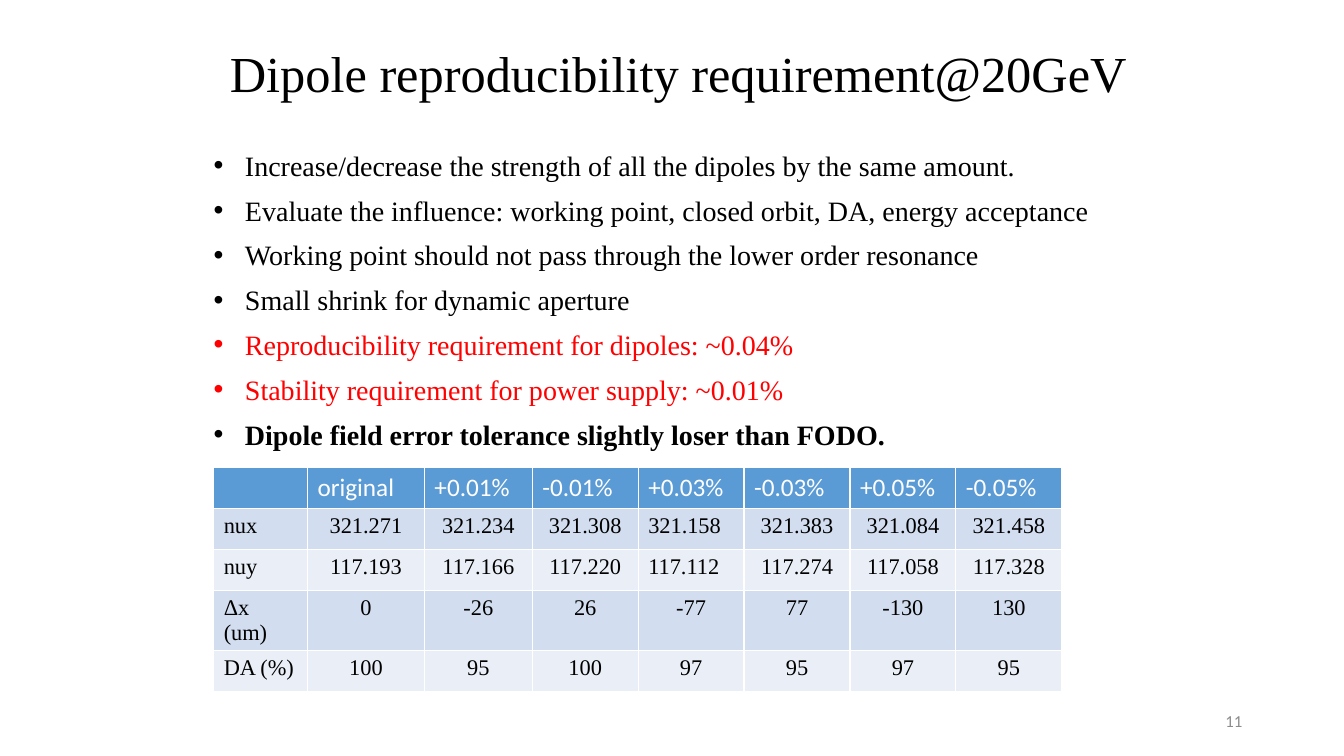
from pptx import Presentation
from pptx.dml.color import RGBColor
from pptx.enum.text import MSO_ANCHOR, MSO_AUTO_SIZE, PP_ALIGN
from pptx.util import Inches, Pt

SLIDE_WIDTH = Inches(13.33)
SLIDE_HEIGHT = Inches(7.5)

BLACK = RGBColor(0x00, 0x00, 0x00)
WHITE = RGBColor(0xFF, 0xFF, 0xFF)
RED = RGBColor(0xFF, 0x00, 0x00)
GRAY = RGBColor(0x8C, 0x8C, 0x8C)
HEADER_BLUE = RGBColor(0x5B, 0x9B, 0xD5)
DARK_BAND = RGBColor(0xD2, 0xDE, 0xEF)
LIGHT_BAND = RGBColor(0xEA, 0xEF, 0xF7)

SERIF = "Times New Roman"
SANS = "Calibri"

TITLE = "Dipole reproducibility requirement@20GeV"
BULLETS = [
    ("Increase/decrease the strength of all the dipoles by the same amount.", BLACK, False),
    ("Evaluate the influence: working point, closed orbit, DA, energy acceptance", BLACK, False),
    ("Working point should not pass through the lower order resonance", BLACK, False),
    ("Small shrink for dynamic aperture", BLACK, False),
    ("Reproducibility requirement for dipoles: ~0.04%", RED, False),
    ("Stability requirement for power supply: ~0.01%", RED, False),
    ("Dipole field error tolerance slightly loser than FODO.", BLACK, True),
]
ERROR_TABLE = [
    ["", "original", "+0.01%", "-0.01%", "+0.03%", "-0.03%", "+0.05%", "-0.05%"],
    ["nux", "321.271", "321.234", "321.308", "321.158", "321.383", "321.084", "321.458"],
    ["nuy", "117.193", "117.166", "117.220", "117.112", "117.274", "117.058", "117.328"],
    ["Δx (um)", "0", "-26", "26", "-77", "77", "-130", "130"],
    ["DA (%)", "100", "95", "100", "97", "95", "97", "95"],
]
COLUMN_SHARES = [6.98, 8.7, 8.03] + [7.88] * 5
ROW_SHARE = 5.41
LEFT_ALIGNED_CELLS = {(1, 4), (2, 4)}


def across(percent):
    """Return a percentage of the slide width as a length."""
    return int(SLIDE_WIDTH * percent / 100)


def down(percent):
    """Return a percentage of the slide height as a length."""
    return int(SLIDE_HEIGHT * percent / 100)


def box(left, top, width, height):
    """Return a rectangle given in percentages of the slide size."""
    return across(left), down(top), across(width), down(height)


def place(shape, left, top, width, height):
    """Move and size a shape in percentages of the slide size."""
    shape.left, shape.top, shape.width, shape.height = box(left, top, width, height)


def format_runs(paragraph, size, font_name, color, bold=False):
    """Give every run of a paragraph the same font."""
    for run in paragraph.runs:
        run.font.size = Pt(size)
        run.font.name = font_name
        run.font.color.rgb = color
        run.font.bold = bold


def fill_title(title):
    """Write the slide title into its placeholder."""
    place(title, 16.35, 1.73, 69.17, 16.67)
    text_frame = title.text_frame
    text_frame.text = TITLE
    text_frame.auto_size = MSO_AUTO_SIZE.NONE
    text_frame.vertical_anchor = MSO_ANCHOR.MIDDLE
    paragraph = text_frame.paragraphs[0]
    paragraph.alignment = PP_ALIGN.LEFT
    paragraph.line_spacing = 0.9
    format_runs(paragraph, 36, SERIF, BLACK)


def fill_bullets(body):
    """Write the bulleted findings into the body placeholder."""
    place(body, 15.15, 17.47, 72.39, 43.2)
    text_frame = body.text_frame
    text_frame.text = "\n".join(text for text, _, _ in BULLETS)
    text_frame.auto_size = MSO_AUTO_SIZE.NONE
    for paragraph, (_, color, bold) in zip(text_frame.paragraphs, BULLETS):
        paragraph.line_spacing = Pt(32)
        paragraph.space_before = Pt(0)
        properties = paragraph._p.get_or_add_pPr()
        properties.set("marL", str(Inches(0.31)))
        properties.set("indent", str(-Inches(0.31)))
        format_runs(paragraph, 20, SERIF, color, bold)


def fill_cell(cell, text, row, column):
    """Write one table cell in the style of its row and column."""
    cell.text = text
    cell.fill.solid()
    paragraph = cell.text_frame.paragraphs[0]
    if row == 0:
        cell.fill.fore_color.rgb = HEADER_BLUE
        format_runs(paragraph, 18, SANS, WHITE)
        return
    cell.fill.fore_color.rgb = DARK_BAND if row % 2 else LIGHT_BAND
    format_runs(paragraph, 16, SERIF, BLACK)
    if column > 0 and (row, column) not in LEFT_ALIGNED_CELLS:
        paragraph.alignment = PP_ALIGN.CENTER


def add_error_table(slide):
    """Add the table of tune, orbit and aperture against dipole error."""
    row_count = len(ERROR_TABLE)
    bounds = box(15.9, 61.87, sum(COLUMN_SHARES), ROW_SHARE * row_count)
    table = slide.shapes.add_table(row_count, len(COLUMN_SHARES), *bounds).table
    for column, share in zip(table.columns, COLUMN_SHARES):
        column.width = across(share)
    for row_index, values in enumerate(ERROR_TABLE):
        table.rows[row_index].height = down(ROW_SHARE)
        for column_index, text in enumerate(values):
            fill_cell(table.cell(row_index, column_index), text, row_index, column_index)


def add_page_number(slide, number):
    """Add the page number at the lower right."""
    text_frame = slide.shapes.add_textbox(*box(70.67, 92.67, 22.5, 5.33)).text_frame
    text_frame.word_wrap = True
    text_frame.vertical_anchor = MSO_ANCHOR.MIDDLE
    text_frame.text = number
    paragraph = text_frame.paragraphs[0]
    paragraph.alignment = PP_ALIGN.RIGHT
    format_runs(paragraph, 12, SANS, GRAY)


def main():
    """Build the slide and save the presentation."""
    presentation = Presentation()
    presentation.slide_width = SLIDE_WIDTH
    presentation.slide_height = SLIDE_HEIGHT
    slide = presentation.slides.add_slide(presentation.slide_layouts[1])
    fill_title(slide.shapes.title)
    fill_bullets(slide.placeholders[1])
    add_error_table(slide)
    add_page_number(slide, "11")
    presentation.save("out.pptx")


if __name__ == "__main__":
    main()
